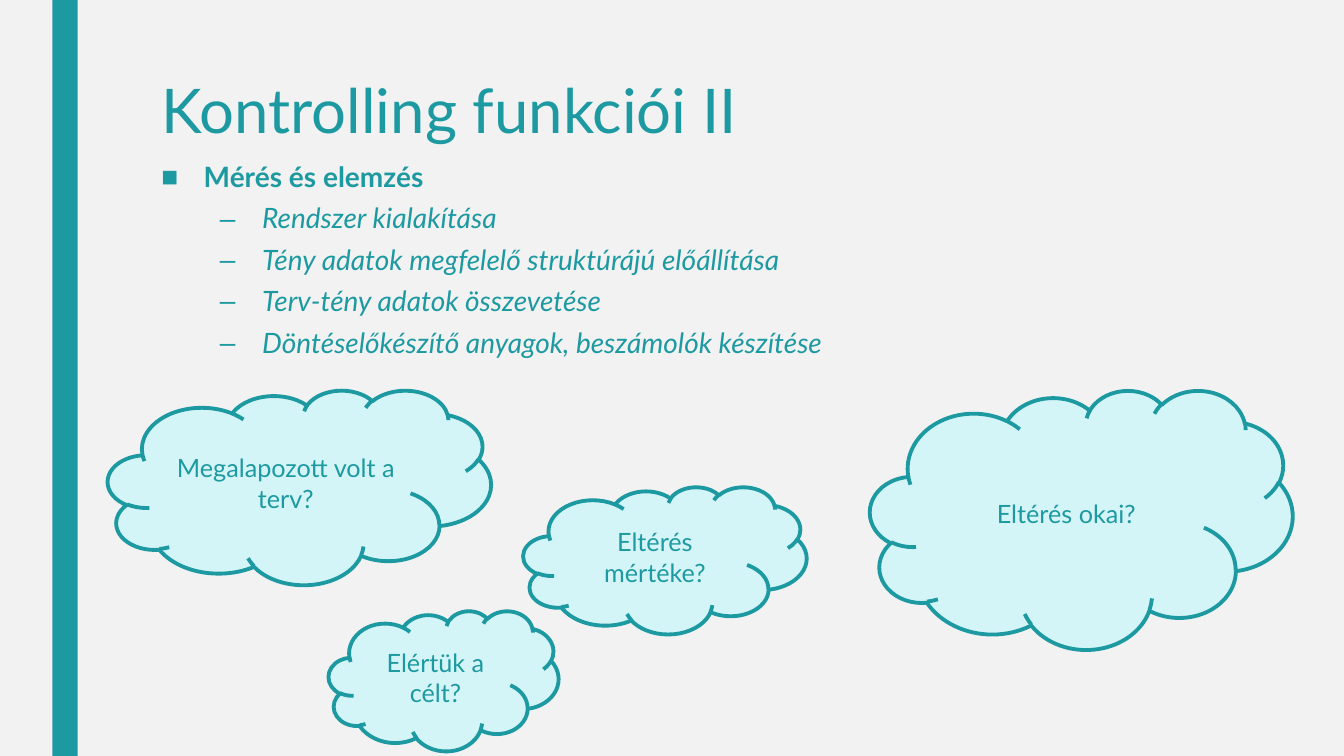
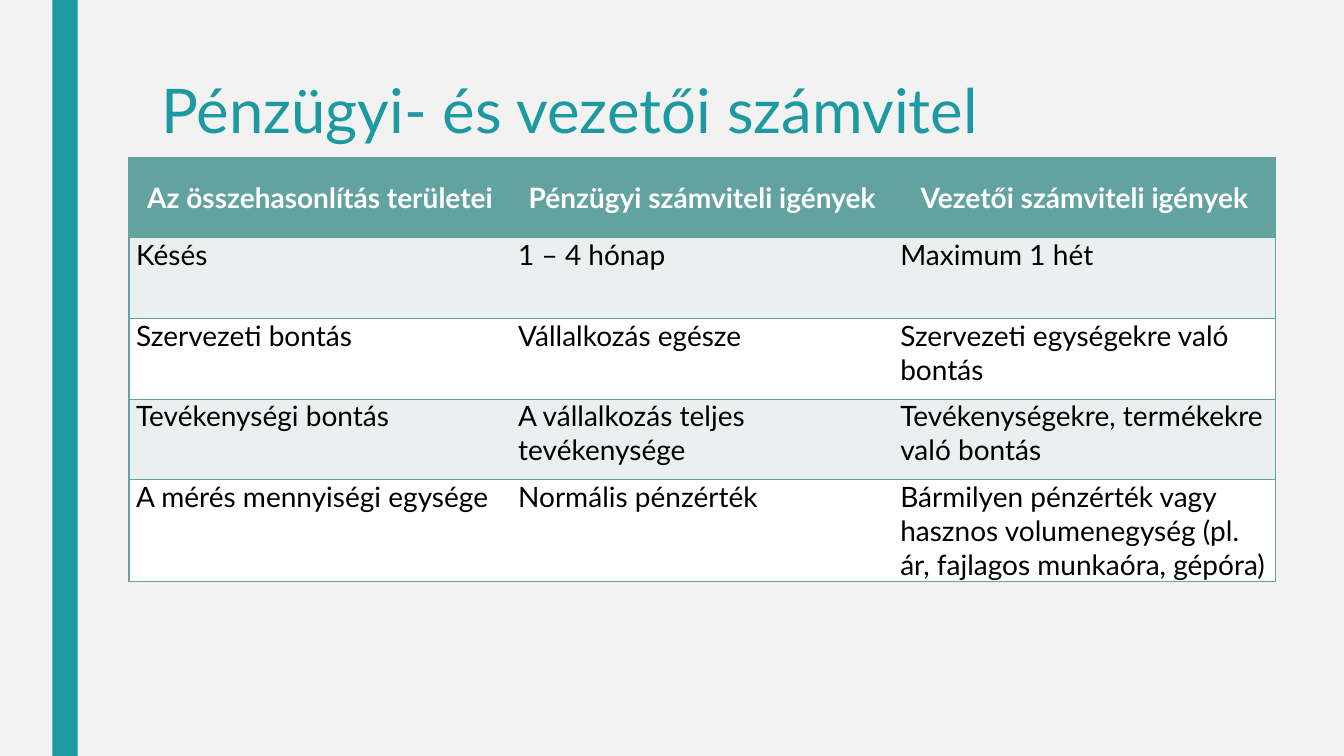
from lxml import etree
from pptx import Presentation
from pptx.dml.color import RGBColor
from pptx.enum.shapes import MSO_SHAPE
from pptx.enum.text import MSO_ANCHOR, MSO_AUTO_SIZE, PP_ALIGN
from pptx.oxml.ns import qn
from pptx.util import Inches, Pt

FONT = "Lato"
TEAL = "1D9AA1"
PALE_TEAL = "D4F5F7"
BACKGROUND = "F2F2F2"
TABLE_GREEN = "62A39F"
TABLE_BAND = "EAF0F0"
WHITE = "FFFFFF"
BLACK = "000000"

TITLE_BOX = (1.5, 0.75, 10.5, 1.62)
BODY_BOX = (1.5, 1.56, 10.5, 3.92)
BULLET_HANGING = 0.42

FUNCTIONS = [
    (0, "Mérés és elemzés"),
    (1, "Rendszer kialakítása"),
    (1, "Tény adatok megfelelő struktúrájú előállítása"),
    (1, "Terv-tény adatok összevetése"),
    (1, "Döntéselőkészítő anyagok, beszámolók készítése"),
]
QUESTIONS = [
    ("Megalapozott volt a terv?", (1.07, 3.87, 3.8, 1.93)),
    ("Elértük a célt?", (3.26, 6.06, 2.28, 1.39)),
    ("Eltérés mértéke?", (5.19, 4.83, 2.81, 1.46)),
    ("Eltérés okai?", (8.63, 3.87, 4.19, 2.57)),
]
COMPARISON = [
    ("Az összehasonlítás területei", "Pénzügyi számviteli igények", "Vezetői számviteli igények"),
    ("Késés", "1 – 4 hónap", "Maximum 1 hét"),
    ("Szervezeti bontás", "Vállalkozás egésze", "Szervezeti egységekre való bontás"),
    ("Tevékenységi bontás", "A vállalkozás teljes tevékenysége",
     "Tevékenységekre, termékekre való bontás"),
    ("A mérés mennyiségi egysége", "Normális pénzérték",
     "Bármilyen pénzérték vagy hasznos volumenegység (pl. ár, fajlagos munkaóra, gépóra)"),
]


def rgb(color):
    return RGBColor.from_string(color)


def inches(box):
    return [Inches(length) for length in box]


def place(shape, box):
    shape.left, shape.top, shape.width, shape.height = inches(box)


def write(paragraph, text, size=20, color=TEAL, bold=False, italic=False,
          align=PP_ALIGN.LEFT, line_spacing=None, before=0, after=0):
    paragraph.alignment = align
    paragraph.line_spacing = line_spacing
    paragraph.space_before, paragraph.space_after = Pt(before), Pt(after)
    run = paragraph.add_run()
    run.text = text
    font = run.font
    font.name, font.size, font.bold, font.italic = FONT, Pt(size), bold, italic
    font.color.rgb = rgb(color)


def add_bullet(paragraph, character, left):
    properties = paragraph._p.get_or_add_pPr()
    properties.set("marL", str(Inches(left)))
    properties.set("indent", str(-Inches(BULLET_HANGING)))
    etree.SubElement(properties, qn("a:buChar"), char=character)


def set_borders(cell, sides):
    """Draw the named sides (L, R, T, B) and hide the others."""
    properties = cell._tc.get_or_add_tcPr()
    for side in "LRTB":
        line = etree.SubElement(properties, qn(f"a:ln{side}"), w=str(Pt(1)))
        if side in sides:
            fill = etree.SubElement(line, qn("a:solidFill"))
            etree.SubElement(fill, qn("a:srgbClr"), val=TABLE_GREEN)
        else:
            etree.SubElement(line, qn("a:noFill"))


def add_filled_shape(slide, kind, box, fill, line_width=0):
    shape = slide.shapes.add_shape(kind, *inches(box))
    shape.shadow.inherit = False
    shape.fill.solid()
    shape.fill.fore_color.rgb = rgb(fill)
    if line_width:
        shape.line.color.rgb = rgb(TEAL)
        shape.line.width = Pt(line_width)
    else:
        shape.line.fill.background()
    return shape


def add_titled_slide(presentation, layout_name, title):
    slide = presentation.slides.add_slide(presentation.slide_layouts.get_by_name(layout_name))
    add_filled_shape(slide, MSO_SHAPE.RECTANGLE, (0.52, 0, 0.25, 7.5), TEAL)
    place(slide.shapes.title, TITLE_BOX)
    frame = slide.shapes.title.text_frame
    frame.auto_size = MSO_AUTO_SIZE.NONE
    frame.vertical_anchor = MSO_ANCHOR.TOP
    write(frame.paragraphs[0], title, size=44, line_spacing=0.89)
    return slide


def fill_list(body, items):
    place(body, BODY_BOX)
    frame = body.text_frame
    frame.auto_size = MSO_AUTO_SIZE.NONE
    for index, (level, text) in enumerate(items):
        paragraph = frame.add_paragraph() if index else frame.paragraphs[0]
        paragraph.level = level
        add_bullet(paragraph, "–" if level else "■", 1 if level else BULLET_HANGING)
        write(paragraph, text, bold=level == 0, italic=level == 1, line_spacing=0.94,
              before=5 if index else 0, after=2)


def add_cloud(slide, text, box):
    cloud = add_filled_shape(slide, MSO_SHAPE.CLOUD, box, PALE_TEAL, line_width=2.75)
    cloud.text_frame.word_wrap = True
    write(cloud.text_frame.paragraphs[0], text, size=18, align=PP_ALIGN.CENTER)


def format_cell(cell, text, fill, header):
    cell.margin_left = cell.margin_right = Inches(0.07)
    cell.margin_top = cell.margin_bottom = 0
    cell.vertical_anchor = MSO_ANCHOR.MIDDLE if header else MSO_ANCHOR.TOP
    cell.fill.solid()
    cell.fill.fore_color.rgb = rgb(fill)
    write(cell.text_frame.paragraphs[0], text, color=WHITE if header else BLACK, bold=header,
          align=PP_ALIGN.CENTER if header else PP_ALIGN.LEFT)


def add_comparison_table(slide, rows):
    columns = len(rows[0])
    box = inches((1.28, 1.56, 11.37, 4.2))
    table = slide.shapes.add_table(len(rows), columns, *box).table
    for row_index, texts in enumerate(rows):
        last_row = row_index == len(rows) - 1
        table.rows[row_index].height = Inches(1 if last_row else 0.8)
        header = row_index == 0
        fill = TABLE_GREEN if header else TABLE_BAND if row_index % 2 else WHITE
        for column, text in enumerate(texts):
            cell = table.cell(row_index, column)
            outer = "L" if column == 0 else "R" if column == columns - 1 else ""
            set_borders(cell, "TB" + outer)
            format_cell(cell, text, fill, header)


def main():
    presentation = Presentation()
    presentation.slide_width, presentation.slide_height = Inches(13.33), Inches(7.5)
    background = presentation.slide_master.background.fill
    background.solid()
    background.fore_color.rgb = rgb(BACKGROUND)

    slide = add_titled_slide(presentation, "Title and Content", "Kontrolling funkciói II")
    fill_list(slide.placeholders[1], FUNCTIONS)
    for text, box in QUESTIONS:
        add_cloud(slide, text, box)

    slide = add_titled_slide(presentation, "Title Only", "Pénzügyi- és vezetői számvitel")
    add_comparison_table(slide, COMPARISON)

    presentation.save("out.pptx")


if __name__ == "__main__":
    main()
